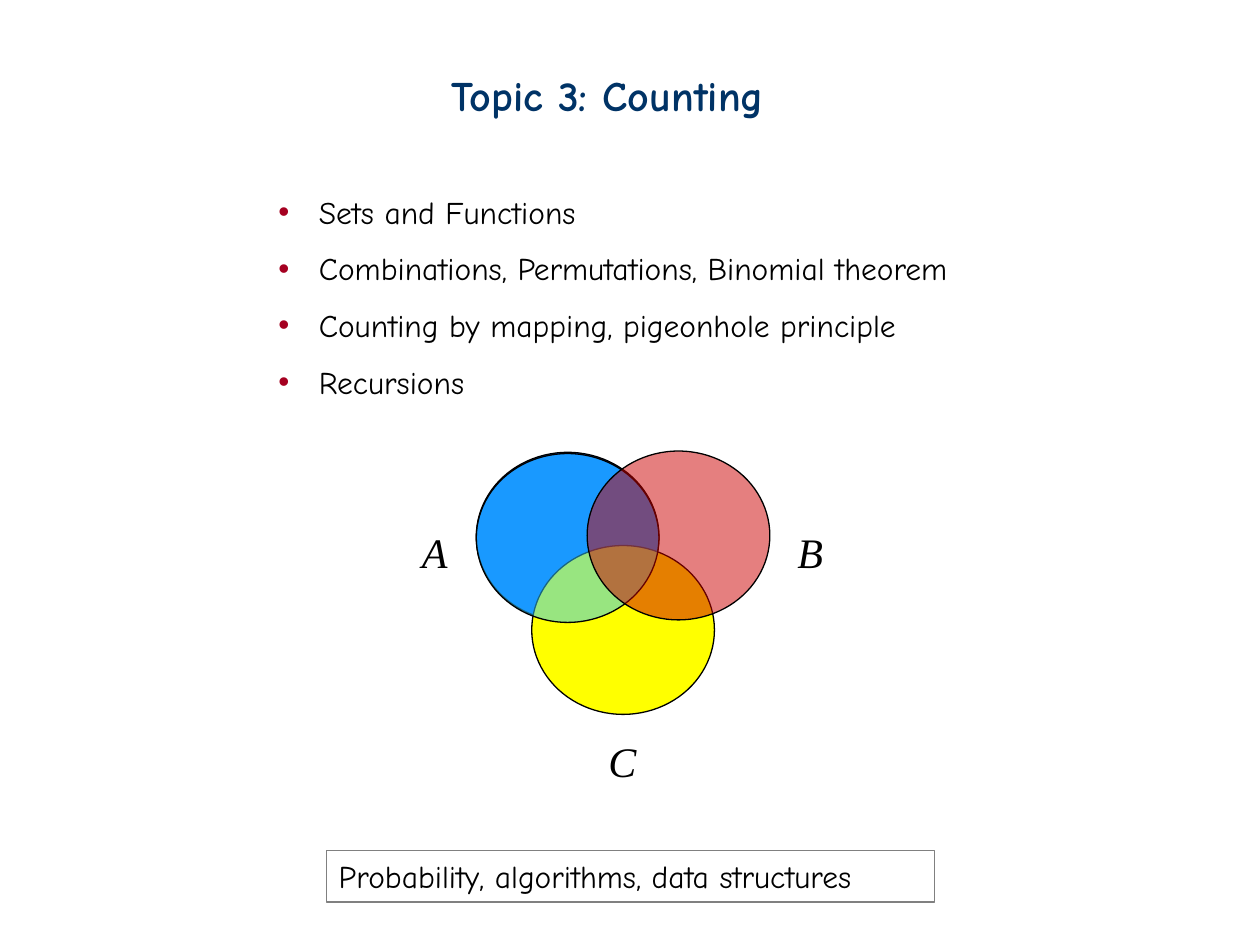
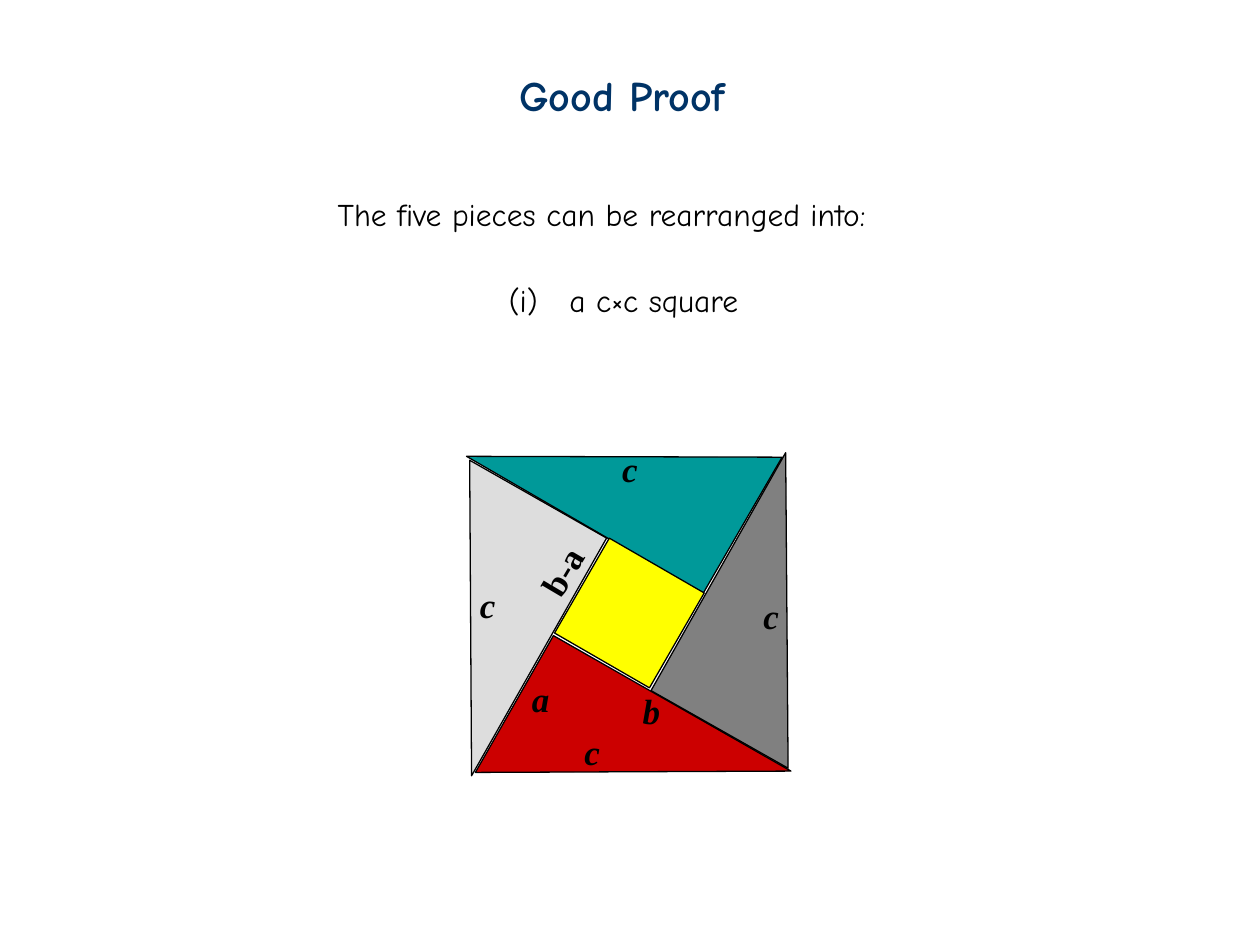
from lxml.etree import SubElement
from pptx import Presentation
from pptx.dml.color import RGBColor
from pptx.enum.shapes import MSO_SHAPE
from pptx.enum.text import MSO_ANCHOR, MSO_AUTO_SIZE, PP_ALIGN
from pptx.oxml.ns import qn
from pptx.util import Inches, Pt

NAVY = RGBColor(0x00, 0x33, 0x66)
CRIMSON = RGBColor(0xA5, 0x00, 0x21)
BLACK = RGBColor(0x00, 0x00, 0x00)
GRAY = RGBColor(0x80, 0x80, 0x80)
LIGHT_GRAY = RGBColor(0xDD, 0xDD, 0xDD)
BLUE = RGBColor(0x00, 0x66, 0xFF)
SKY = RGBColor(0x33, 0xCC, 0xFF)
RED = RGBColor(0xCC, 0x00, 0x00)
YELLOW = RGBColor(0xFF, 0xFF, 0x00)
TEAL = RGBColor(0x00, 0x99, 0x99)
TEXT_FONT = "Comic Neue"
MATH_FONT = "Times New Roman"


def place(shape, left, top, width, height):
    """Move a shape to a box given in inches."""
    shape.left, shape.top = Inches(left), Inches(top)
    shape.width, shape.height = Inches(width), Inches(height)


def write(shape, lines, size=18, font=TEXT_FONT, color=BLACK, bold=False,
          italic=False, align=PP_ALIGN.LEFT, wrap=True, spacing=1.0):
    """Fill a shape with one formatted paragraph per line."""
    frame = shape.text_frame
    frame.text = "\n".join(lines)
    frame.word_wrap = wrap
    frame.auto_size = MSO_AUTO_SIZE.NONE
    frame.vertical_anchor = MSO_ANCHOR.TOP
    for paragraph in frame.paragraphs:
        paragraph.alignment = align
        paragraph.line_spacing = spacing
        paragraph.space_before = Pt(0)
        paragraph.font.size = Pt(size)
        paragraph.font.name = font
        paragraph.font.bold = bold
        paragraph.font.italic = italic
        paragraph.font.color.rgb = color


def indent(shape, hanging, bullet=None):
    """Give every paragraph a hanging indent and an optional bullet."""
    for paragraph in shape.text_frame.paragraphs:
        properties = paragraph._p.get_or_add_pPr()
        properties.set("marL", str(Inches(hanging)))
        properties.set("indent", str(-Inches(hanging)))
        if bullet:
            color = SubElement(properties, qn("a:buClr"))
            SubElement(color, qn("a:srgbClr")).set("val", str(CRIMSON))
            SubElement(properties, qn("a:buChar")).set("char", bullet)
        else:
            SubElement(properties, qn("a:buNone"))


def add_piece(slide, kind, box, fill=None, line=BLACK, rotation=0, opacity=None):
    """Draw a thin-lined shape, optionally filled, turned or translucent."""
    piece = slide.shapes.add_shape(kind, *map(Inches, box))
    piece.shadow.inherit = False
    piece.rotation = rotation
    piece.line.color.rgb = line
    piece.line.width = Pt(0.75)
    if fill is None:
        piece.fill.background()
    else:
        piece.fill.solid()
        piece.fill.fore_color.rgb = fill
    if opacity:
        color = piece.fill._xPr.find(qn("a:solidFill"))[0]
        SubElement(color, qn("a:alpha")).set("val", str(opacity * 1000))
    return piece


def add_label(slide, text, box, rotation=0, **style):
    """Add a math label."""
    label = slide.shapes.add_textbox(*map(Inches, box))
    label.rotation = rotation
    write(label, [text], font=MATH_FONT, wrap=False, **style)


def add_titled_slide(deck, title, left, width):
    """Add a title-and-content slide with its title in place."""
    slide = deck.slides.add_slide(deck.slide_layouts[1])
    place(slide.shapes.title, left, 0.5, width, 0.5)
    write(slide.shapes.title, [title], size=24, color=NAVY, bold=True)
    return slide


def draw_venn(slide, left, top):
    """Draw three overlapping sets and their names."""
    for name, dx, dy in (("A", 0, 0.55), ("B", 2.98, 0.55), ("C", 1.48, 2.21)):
        add_label(slide, name, (left + dx, top + dy, 0.41, 0.5), size=24, italic=True)
    for dx, dy, fill, opacity in (
        (0.53, 0.01, BLUE, None),
        (0.97, 0.75, YELLOW, None),
        (0.53, 0.02, SKY, 50),
        (1.41, 0, RED, 50),
    ):
        add_piece(slide, MSO_SHAPE.OVAL, (left + dx, top + dy, 1.45, 1.34),
                  fill, opacity=opacity)


def draw_proof_square(slide, left, top):
    """Draw four right triangles around a small square, with side names."""
    for dx, dy, rotation, fill in (
        (1.87, 0.13, 29.5, GRAY),
        (0.65, 1.41, 119.7, RED),
        (0.58, -1.09, 300.1, TEAL),
        (-0.64, 0.19, 209.6, LIGHT_GRAY),
    ):
        add_piece(slide, MSO_SHAPE.RIGHT_TRIANGLE,
                  (left + dx, top + dy, 1.25, 2.17), fill, rotation=rotation)
    add_piece(slide, MSO_SHAPE.RECTANGLE, (left + 0.81, top + 0.8, 0.87, 0.87),
              YELLOW, rotation=30)
    for side, dx, dy, width in (
        ("c", 0.79, 2.12, 0.32),
        ("c", 2.21, 1.04, 0.32),
        ("c", -0.04, 0.95, 0.32),
        ("a", 0.37, 1.7, 0.34),
        ("b", 1.21, 1.79, 0.42),
        ("c", 1.09, -0.13, 0.32),
    ):
        add_label(slide, side, (left + dx, top + dy, width, 0.43), size=20,
                  bold=True, italic=True, align=PP_ALIGN.CENTER)
    add_label(slide, "b-a", (left + 0.41, top + 0.69, 0.59, 0.43), rotation=300.6,
              size=20, bold=True, align=PP_ALIGN.CENTER)


def build_counting_slide(deck):
    """Build the topic overview with its list, diagram and applications."""
    slide = add_titled_slide(deck, "Topic 3: Counting", 3.48, 3.02)
    topics = slide.placeholders[1]
    place(topics, 2.11, 1.33, 5.72, 1.91)
    write(topics, [
        "Sets and Functions",
        "Combinations, Permutations, Binomial theorem",
        "Counting by mapping, pigeonhole principle",
        "Recursions",
    ], spacing=1.5)
    indent(topics, 0.32, "•")
    applications = add_piece(slide, MSO_SHAPE.RECTANGLE, (2.59, 6.75, 4.83, 0.41),
                             line=GRAY)
    write(applications, ["Probability, algorithms, data structures"])
    draw_venn(slide, 3.25, 3.58)


def build_proof_slide(deck):
    """Build the rearrangement proof."""
    slide = add_titled_slide(deck, "Good Proof", 4.02, 1.98)
    draw_proof_square(slide, 3.75, 3.63)
    statement = slide.placeholders[1]
    place(statement, 2.58, 1.5, 4.78, 0.4)
    write(statement, ["The five pieces can be rearranged into:"])
    indent(statement, 0)
    arrangement = slide.shapes.add_textbox(*map(Inches, (3.94, 2.18, 2.12, 0.4)))
    write(arrangement, ["(i)\ta c×c square"])
    indent(arrangement, 0.48)


def main():
    """Build and save the deck."""
    deck = Presentation()
    deck.slide_width, deck.slide_height = Inches(10), Inches(7.5)
    build_counting_slide(deck)
    build_proof_slide(deck)
    deck.save("out.pptx")


if __name__ == "__main__":
    main()
